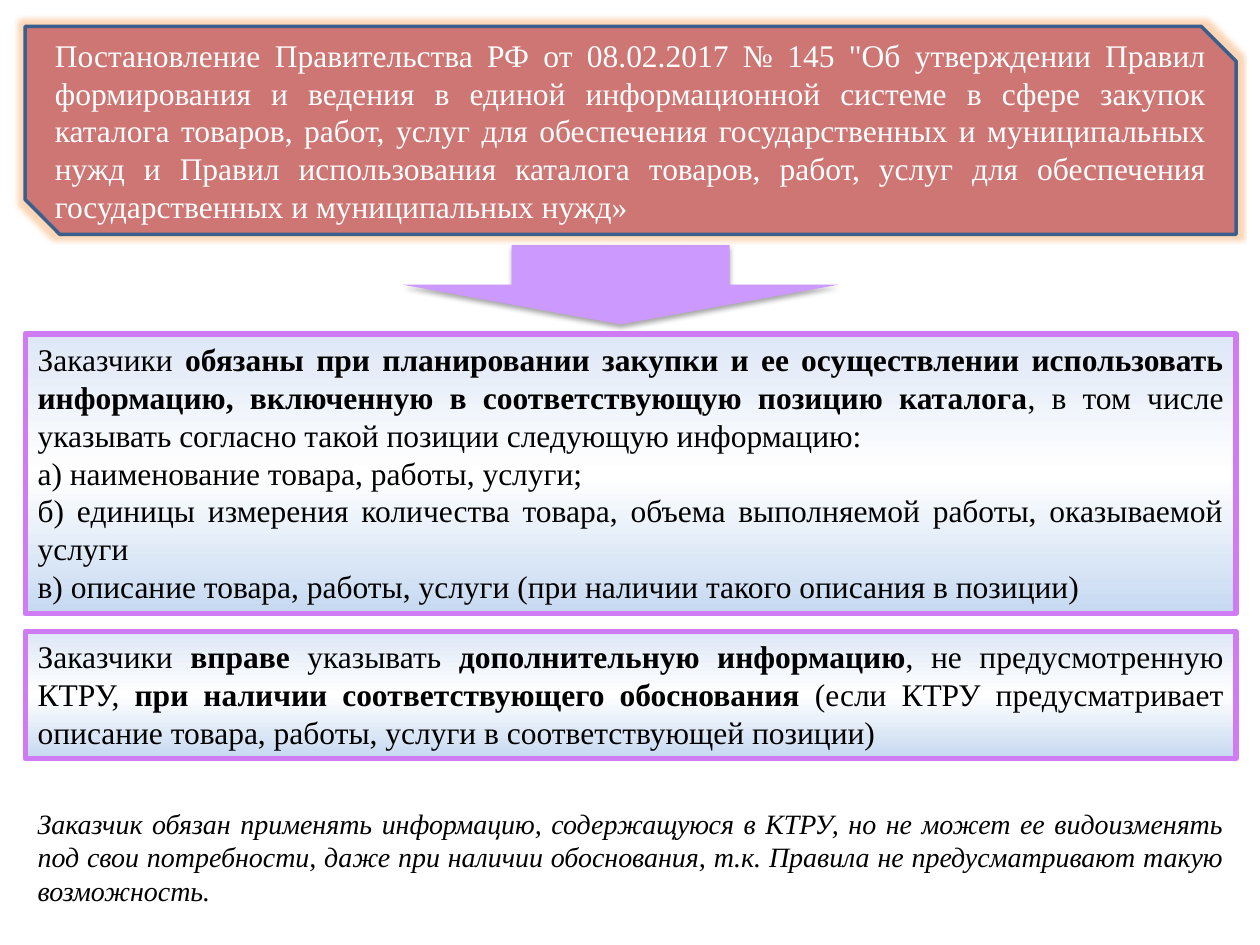
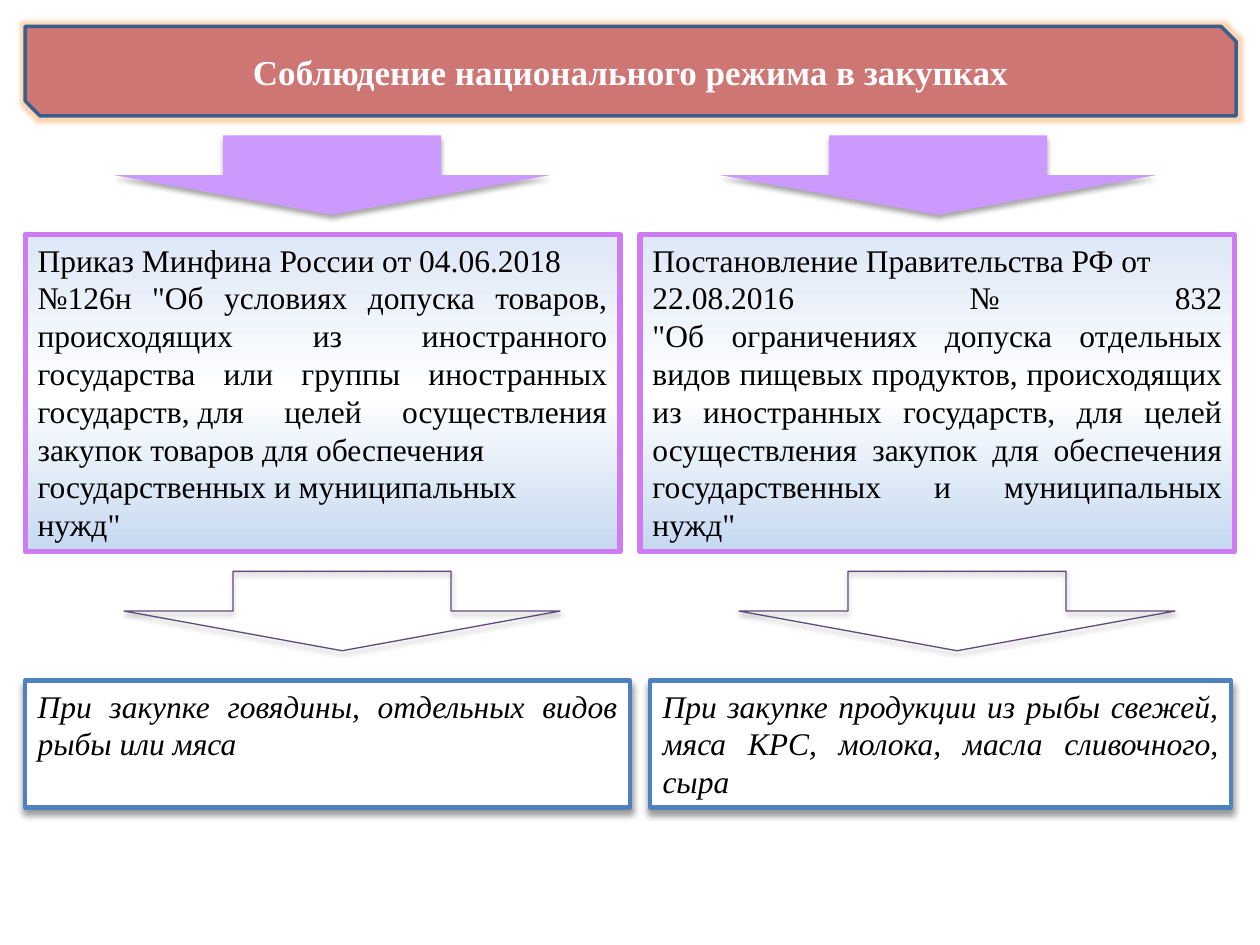
import copy

import pptx
import pptx.dml.color
import pptx.enum.shapes
import pptx.enum.text
import pptx.oxml
import pptx.oxml.ns
import pptx.util

RGB = pptx.dml.color.RGBColor
SHAPE = pptx.enum.shapes.MSO_SHAPE
ALIGN = pptx.enum.text.PP_ALIGN
ANCHOR = pptx.enum.text.MSO_ANCHOR

# Palette and type
BLACK = RGB(0x00, 0x00, 0x00)
WHITE = RGB(0xFF, 0xFF, 0xFF)
ROSE = RGB(0xCE, 0x76, 0x74)
NAVY = RGB(0x3A, 0x5F, 0x8C)
LILAC = RGB(0xCC, 0x99, 0xFF)
VIOLET = RGB(0xCF, 0x7C, 0xF4)
PLUM = RGB(0x60, 0x4A, 0x7B)
BLUE = RGB(0x4F, 0x81, 0xBD)
ORANGE = RGB(0xF7, 0x96, 0x46)
PANEL_STOPS = [(0, RGB(0xDE, 0xE7, 0xF6)), (0.5, WHITE), (1, RGB(0xC6, 0xD9, 0xF1))]
FONT = "Times New Roman"
NBSP = chr(160)  # written as ~ in the texts

# Layout: 100 px to the inch
EMU_PER_PX = 9144
LEFT, WIDTH, TOP = 20, 961, 21
ARROW_W, ARROW_H = 346, 63


class Deck:
    def __init__(self):
        self.prs = pptx.Presentation()
        self.prs.slide_width = self.px(1000)
        self.prs.slide_height = self.px(750)
        self.s = None

    def px(self, n):
        return pptx.util.Emu(n * EMU_PER_PX)

    def slide(self):
        self.s = self.prs.slides.add_slide(self.prs.slide_layouts[6])

    def shape(self, kind, x, y, w, h, fill, line, line_pt):
        sp = self.s.shapes.add_shape(kind, *map(self.px, (x, y, w, h)))
        sp.shadow.inherit = False
        if fill is None:
            sp.fill.background()
        else:
            sp.fill.solid()
            sp.fill.fore_color.rgb = fill
        if line is None:
            sp.line.fill.background()
        else:
            sp.line.color.rgb = line
            sp.line.width = pptx.util.Pt(line_pt)
        return sp

    def effect(self, sp, tag, color, alpha, attrs):
        xml = (f'<a:{tag} {pptx.oxml.ns.nsdecls("a")} {attrs}><a:srgbClr val="{color}">'
               f'<a:alpha val="{alpha * 1000}"/></a:srgbClr></a:{tag}>')
        effects = sp._element.spPr.find(pptx.oxml.ns.qn("a:effectLst"))
        effects.append(pptx.oxml.parse_xml(xml))

    def shadow(self, sp, alpha, blur, dist):
        blur, dist = pptx.util.Pt(blur), pptx.util.Pt(dist)
        self.effect(sp, "outerShdw", BLACK, alpha,
                    f'blurRad="{blur}" dist="{dist}" dir="5400000" rotWithShape="0"')

    def text(self, sp, paragraphs, size=18, color=BLACK, align=ALIGN.JUSTIFY,
             anchor=ANCHOR.TOP, italic=False):
        """Each paragraph is a list of (text, bold) runs; a newline breaks the line."""
        tf = sp.text_frame
        tf.word_wrap = True
        tf.vertical_anchor = anchor
        for i, runs in enumerate(paragraphs):
            p = tf.add_paragraph() if i else tf.paragraphs[0]
            p.alignment = align
            for content, bold in runs:
                for n, part in enumerate(content.split("\n")):
                    if n:
                        p.add_line_break()
                    r = p.add_run()
                    r.text = part.replace("~", NBSP)
                    r.font.name = FONT
                    r.font.size = pptx.util.Pt(size)
                    r.font.color.rgb = color
                    r.font.bold = bold
                    r.font.italic = italic

    def title(self, h, text, size, align, bold=False):
        sp = self.shape(SHAPE.SNIP_2_DIAG_RECTANGLE, LEFT, TOP, WIDTH, h, ROSE, NAVY, 2)
        self.effect(sp, "glow", ORANGE, 40, f'rad="{pptx.util.Pt(5)}"')
        self.text(sp, [[(text, bold)]], size, WHITE, align, ANCHOR.MIDDLE)

    def panel(self, x, y, w, h, paragraphs):
        sp = self.shape(SHAPE.RECTANGLE, x, y, w, h, WHITE, VIOLET, 3)
        sp.fill.gradient()
        sp.fill.gradient_angle = 270
        first = sp._element.spPr.find(".//" + pptx.oxml.ns.qn("a:gs"))
        first.addnext(copy.deepcopy(first))
        for stop, (position, color) in zip(sp.fill.gradient_stops, PANEL_STOPS):
            stop.position = position
            stop.color.rgb = color
        self.text(sp, paragraphs)

    def arrow(self, center, top, fill=LILAC, line=None):
        x = center - ARROW_H // 2
        y = top - (ARROW_W - ARROW_H) // 2
        sp = self.shape(SHAPE.RIGHT_ARROW, x, y, ARROW_H, ARROW_W, fill, line, 0.75)
        sp.rotation = 90
        self.shadow(sp, 35, 3.1, 1.8)

    def example(self, x, y, w, h, text):
        sp = self.shape(SHAPE.RECTANGLE, x, y, w, h, WHITE, BLUE, 2.5)
        self.shadow(sp, 40, 4, 3)
        self.text(sp, [[(text, False)]], italic=True)

    def note(self, x, y, w, h, text):
        sp = self.s.shapes.add_textbox(*map(self.px, (x, y, w, h)))
        self.text(sp, [[(text, False)]], 16, italic=True)


def catalogue_slide(d):
    d.slide()
    d.title(165, "Постановление Правительства РФ от 08.02.2017 № 145 \"Об утверждении Правил "
            "формирования и ведения в единой информационной системе в сфере закупок каталога "
            "товаров, работ, услуг для обеспечения государственных и муниципальных нужд и "
            "Правил использования каталога товаров, работ, услуг для обеспечения "
            "государственных и муниципальных нужд»", 18, ALIGN.JUSTIFY)
    d.arrow(492, 194)
    # Duties and rights of the customer
    d.panel(LEFT, 265, WIDTH, 222, [
        [("Заказчики ", False),
         ("обязаны при планировании закупки и ее осуществлении использовать информацию, "
          "включенную в соответствующую позицию каталога", True),
         (", в том числе указывать согласно такой позиции следующую информацию:", False)],
        [("а) наименование товара, работы, услуги;", False)],
        [("б) единицы измерения количества товара, объема выполняемой работы, "
          "оказываемой услуги", False)],
        [("в) описание товара, работы, услуги (при наличии такого описания в позиции)", False)],
    ])
    d.panel(LEFT, 501, WIDTH, 101, [
        [("Заказчики ", False), ("вправе", True), (" указывать ", False),
         ("дополнительную информацию", True), (", не предусмотренную КТРУ, ", False),
         ("при наличии соответствующего обоснования", True),
         (" (если КТРУ предусматривает описание товара, работы, услуги "
          "в соответствующей позиции)", False)],
    ])
    d.note(LEFT, 635, WIDTH, 91,
           "Заказчик обязан применять информацию, содержащуюся в КТРУ, но не может ее "
           "видоизменять под свои потребности, даже при наличии обоснования, т.к. Правила "
           "не предусматривают такую возможность.")


def national_regime_slide(d):
    d.slide()
    d.title(71, "Соблюдение национального режима в закупках", 20, ALIGN.CENTER, True)
    # One column per regulation: panel x, upper arrow, lower arrow, example x and width
    columns = [
        (LEFT, 263, 271, LEFT, 480,
         "Приказ~Минфина~России~от~04.06.2018 №126н \"Об условиях допуска товаров, "
         "происходящих из иностранного государства или группы иностранных государств,~для "
         "целей осуществления закупок~товаров~для~обеспечения "
         "государственных~и~муниципальных\nнужд\"",
         "При закупке говядины, отдельных видов рыбы или мяса"),
        (508, 744, 759, 516, 461,
         "Постановление~Правительства~РФ~от 22.08.2016 № 832\n\"Об ограничениях допуска "
         "отдельных видов пищевых продуктов, происходящих из иностранных государств, для "
         "целей осуществления закупок для обеспечения государственных и муниципальных нужд\"",
         "При закупке продукции из рыбы свежей, мяса КРС, молока, масла сливочного, сыра"),
    ]
    for x, upper, lower, example_x, example_w, act, goods in columns:
        d.arrow(upper, 107)
        d.panel(x, 186, 472, 252, [[(act, False)]])
        d.arrow(lower, 453, None, PLUM)
        d.example(example_x, 540, example_w, 101, goods)


def main():
    d = Deck()
    catalogue_slide(d)
    national_regime_slide(d)
    d.prs.save("out.pptx")


if __name__ == "__main__":
    main()
